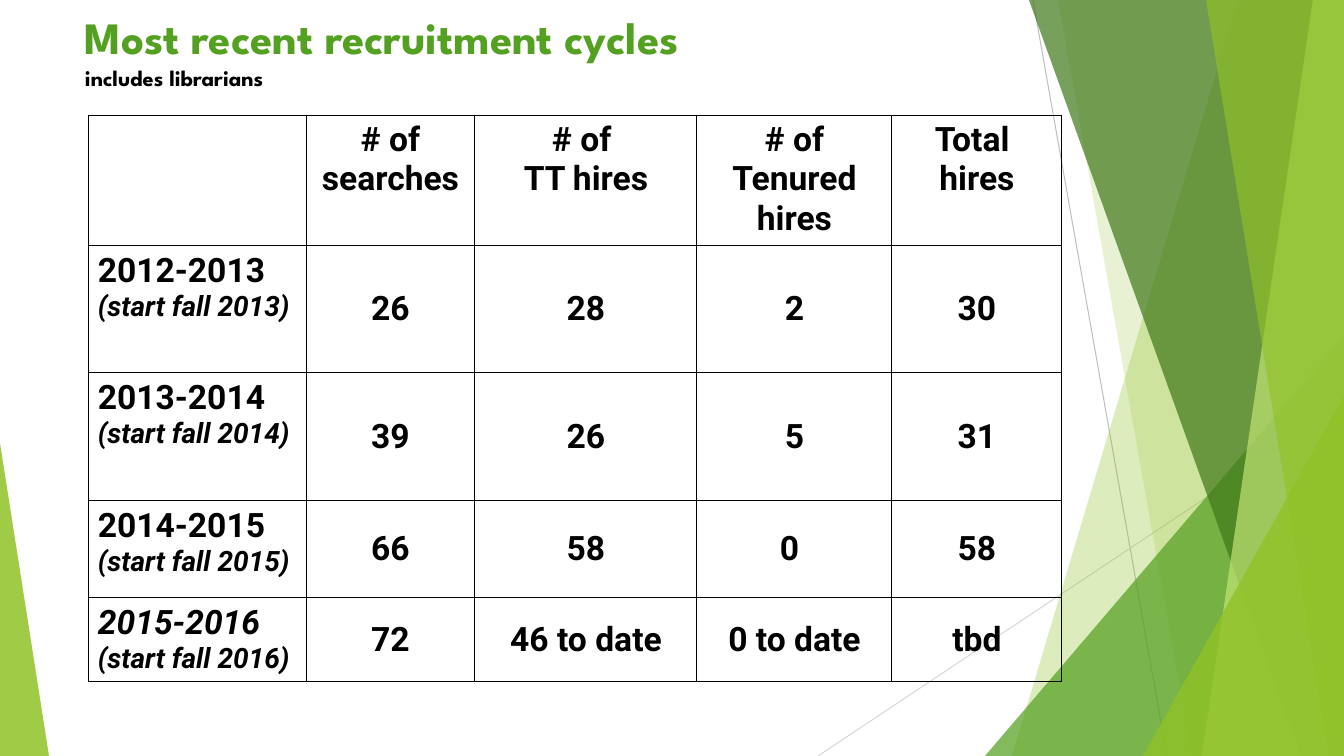
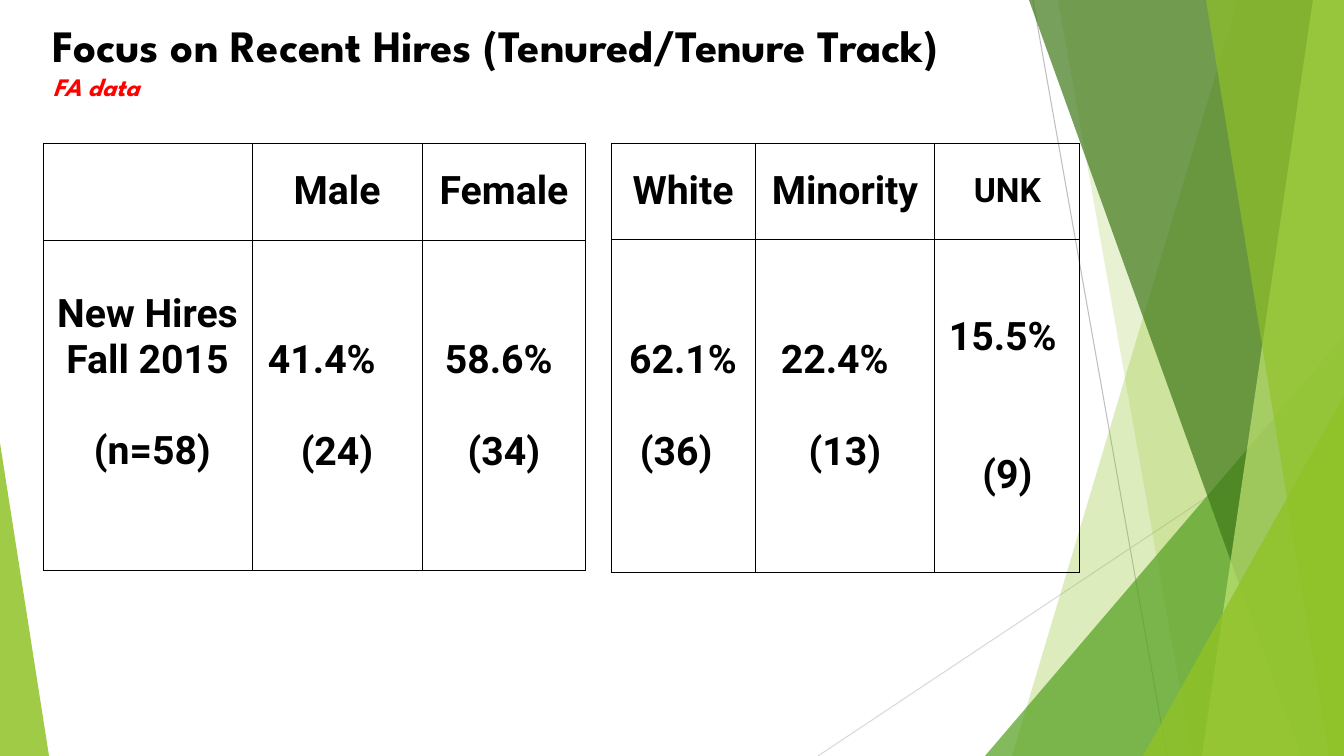
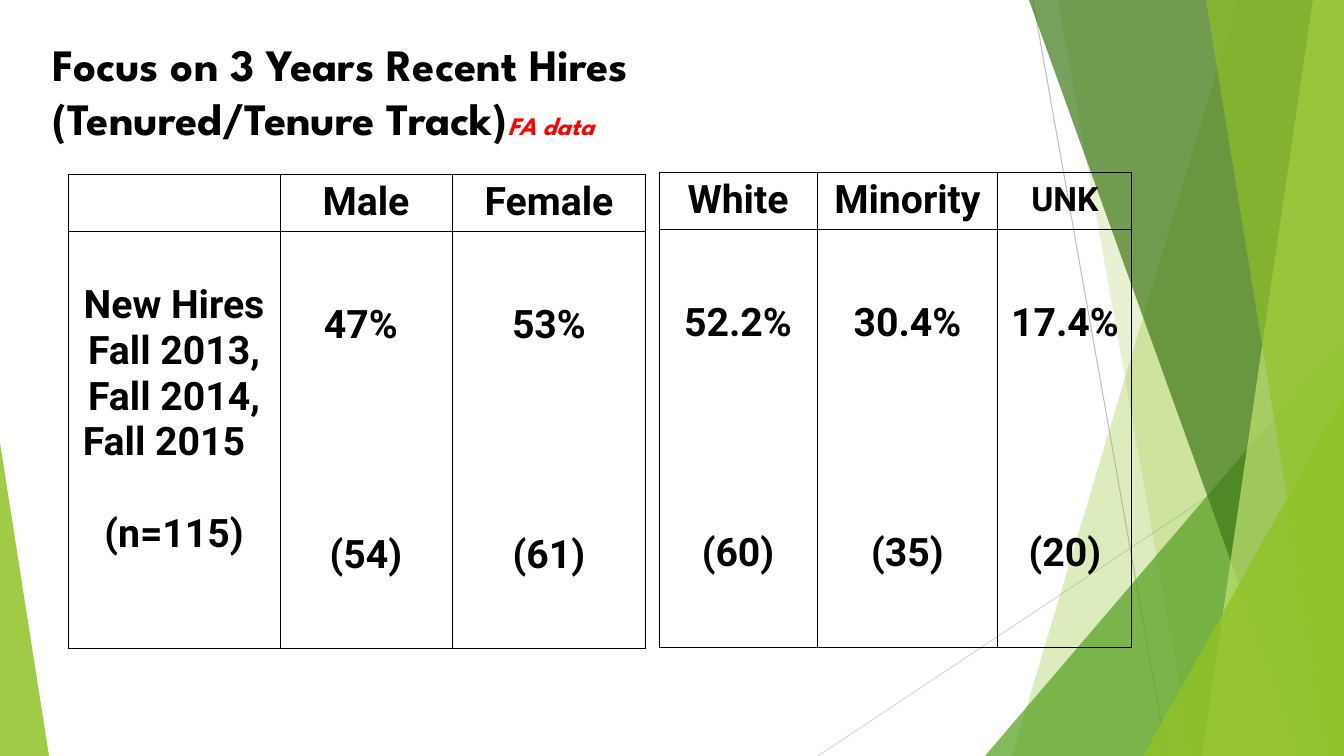
"""Builds three slides on faculty recruitment and recent hires."""
import pptx
import pptx.util
import pptx.dml.color
import pptx.enum.shapes
import pptx.enum.text
import pptx.oxml
import pptx.oxml.ns

RGB = pptx.dml.color.RGBColor
Pt = pptx.util.Pt
qn = pptx.oxml.ns.qn
SHAPE = pptx.enum.shapes.MSO_SHAPE
ALIGN = pptx.enum.text.PP_ALIGN
ANCHOR = pptx.enum.text.MSO_ANCHOR

SCALE = 914400 / 100.8
WIDTH, HEIGHT = 1344, 756
INSET_X, INSET_Y = 10, 5

BLACK = RGB(0x00, 0x00, 0x00)
RED = RGB(0xFF, 0x00, 0x00)
LIME = RGB(0x90, 0xC2, 0x26)
GREEN = RGB(0x54, 0xA0, 0x21)
FOREST = RGB(0x3F, 0x78, 0x19)
PALE = RGB(0xC0, 0xE4, 0x74)
GREY = RGB(0xBF, 0xBF, 0xBF)
LIGHT_GREY = RGB(0xD9, 0xD9, 0xD9)

TITLE_FONT, TABLE_FONT = "League Spartan", "Roboto"

RAYS = [(1033, 0, 1167, HEIGHT, GREY), (WIDTH, 406, 818, HEIGHT, LIGHT_GREY)]
FACETS = [
    ("band", (1238, 1012), LIME, 30),
    ("band", (1058, 1192), LIME, 20),
    ("triangle", (985, 336, 359, 1), GREEN, 72),
    ("band", (1029, 1301), FOREST, 70),
    ("band", (1313, 1202), PALE, 70),
    ("band", (1206, 1329), LIME, 65),
    ("triangle", (1143, 396, 201, 1), LIME, 80),
    ("triangle", (0, 443, 49, 0), LIME, 85),
]

FA_DATA = ("FA data", {"size": Pt(18), "color": RED, "italic": True})


def year(label, start, **font):
    """Return a row heading: the cycle and its start term."""
    return (INSET_Y, [(label, {"left": 0, **font}),
                      (start, {"left": 0, "size": Pt(20), "italic": True})])


def result(share, count, top, gap, share_left=None, count_left=None):
    """Return a cell with a percentage above its head count."""
    return (top, [(share, {"left": share_left}),
                  (count, {"left": count_left, "gap": gap})])


EMPTY = (None, [])
GENDER = [EMPTY, "Male", "Female"]
ETHNICITY = ["White", "Minority", (None, [("UNK", {"size": Pt(24)})])]

SLIDES = [
    {
        "title_at": (75, 5),
        "title": [[("Most recent recruitment cycles", {"color": GREEN})],
                  [("includes librarians", {"size": Pt(16)})]],
        "tables": [{
            "at": (88, 115), "size": 24,
            "cols": [218, 169, 222, 195, 170],
            "rows": [129, 127, 128, 97, 83],
            "cells": [
                [EMPTY,
                 (INSET_Y, ["# of", "searches"]),
                 (INSET_Y, [("# of", {"left": 67}), "TT hires"]),
                 (INSET_Y, ["# of", "Tenured", "hires"]),
                 (INSET_Y, [("Total", {"left": 33}), "hires"])],
                [year("2012-2013", "(start fall 2013)"), "26", "28", "2", "30"],
                [year("2013-2014", "(start fall 2014)"), "39", "26", "5", "31"],
                [year("2014-2015", "(start fall 2015)"), "66", "58",
                 (None, [("0", {"left": 73})]), "58"],
                [year("2015-2016", "(start fall 2016)", italic=True),
                 "72", "46 to date", "0 to date", "tbd"],
            ],
        }],
    },
    {
        "title_at": (43, 13),
        "title": [[("Focus on Recent Hires (Tenured/Tenure Track)", {})], [FA_DATA]],
        "tables": [
            {"at": (43, 143), "size": 28, "cols": [209, 170, 164], "rows": [97, 331],
             "cells": [GENDER, [
                 (51, ["New Hires", "Fall 2015", ("(n=58)", {"gap": 46, "left": 41})]),
                 result("41.4%", "(24)", 97, 46, share_left=6),
                 result("58.6%", "(34)", 97, 46, share_left=13)]]},
            {"at": (611, 143), "size": 28, "cols": [144, 180, 145], "rows": [96, 333],
             "cells": [ETHNICITY, [
                 result("62.1%", "(36)", 98, 46, count_left=19),
                 result("22.4%", "(13)", 98, 46, share_left=16),
                 result("15.5%", "(9)", 75, 92, share_left=4)]]},
        ],
    },
    {
        "title_at": (43, 32),
        "title": [[("Focus on 3 Years Recent Hires", {})],
                  [("(Tenured/Tenure Track)", {}), FA_DATA]],
        "tables": [
            {"at": (68, 174), "size": 28, "cols": [212, 172, 194], "rows": [56, 417],
             "cells": [GENDER, [
                 (51, ["New Hires", "Fall 2013,", "Fall 2014,",
                       ("Fall 2015", {"left": 5}), ("(n=115)", {"gap": 46})]),
                 result("47%", "(54)", 71, 184, share_left=34),
                 result("53%", "(61)", 71, 184)]]},
            {"at": (659, 172), "size": 28, "cols": [158, 181, 134], "rows": [56, 418],
             "cells": [ETHNICITY, [
                 result("52.2%", "(60)", 71, 184),
                 result("30.4%", "(35)", 71, 184),
                 result("17.4%", "(20)", 71, 184)]]},
        ],
    },
]


def px(n):
    return pptx.util.Emu(round(n * SCALE))


def apply(obj, values):
    for name, value in values.items():
        setattr(obj, name, value)


def add_run(p, text, font):
    r = p.add_run()
    r.text = text
    font = dict(font)
    r.font.color.rgb = font.pop("color", BLACK)
    apply(r.font, {"bold": True, **font})


def set_margins(box, top=INSET_Y):
    apply(box, {"margin_left": px(INSET_X), "margin_right": px(INSET_X),
                "margin_top": px(top), "margin_bottom": px(INSET_Y)})


def paragraphs(tf, items):
    for i, item in enumerate(items):
        yield (tf.add_paragraph() if i else tf.paragraphs[0]), item


def add_backdrop(s):
    for x1, y1, x2, y2, color in RAYS:
        ray = s.shapes.add_connector(pptx.enum.shapes.MSO_CONNECTOR.STRAIGHT,
                                     px(x1), px(y1), px(x2), px(y2))
        ray.line.color.rgb = color
        ray.line.width = Pt(0.75)
        ray.element.spPr.append(pptx.oxml.parse_xml(
            '<a:effectLst xmlns:a="http://schemas.openxmlformats.org/drawingml/2006/main"/>'))
    for kind, place, color, opacity in FACETS:
        if kind == "band":
            top_x, bottom_x = place
            outline = s.shapes.build_freeform(top_x, 0, scale=SCALE)
            outline.add_line_segments([(WIDTH, 0), (WIDTH, HEIGHT), (bottom_x, HEIGHT)])
            sp = outline.convert_to_shape()
        else:
            x, y, w, apex = place
            sp = s.shapes.add_shape(SHAPE.ISOSCELES_TRIANGLE,
                                    px(x), px(y), px(w), px(HEIGHT - y))
            sp.adjustments[0] = apex
        sp.shadow.inherit = False
        sp.fill.solid()
        sp.fill.fore_color.rgb = color
        sp.line.fill.background()
        clr = next(sp.element.iter(qn("a:srgbClr")))
        clr.makeelement(qn("a:alpha"), {})
        alpha = pptx.oxml.parse_xml(
            '<a:alpha xmlns:a="http://schemas.openxmlformats.org/drawingml/2006/main" '
            f'val="{opacity * 1000}"/>')
        clr.append(alpha)


def add_title(s, at, lines):
    x, y = at
    tf = s.shapes.add_textbox(px(x), px(y), px(980), px(110)).text_frame
    tf.word_wrap = True
    set_margins(tf)
    for p, runs in paragraphs(tf, lines):
        for text, font in runs:
            add_run(p, text, {"name": TITLE_FONT, "size": Pt(32), **font})


def add_borders(cell):
    tcPr = cell._tc.get_or_add_tcPr()
    for side in ("lnL", "lnR", "lnT", "lnB"):
        tcPr.append(pptx.oxml.parse_xml(
            f'<a:{side} xmlns:a="http://schemas.openxmlformats.org/drawingml/2006/main" '
            f'w="{Pt(0.75)}"><a:solidFill><a:srgbClr val="{BLACK}"/></a:solidFill></a:{side}>'))


def fill_cell(cell, content, size):
    top, lines = (None, [content]) if isinstance(content, str) else content
    add_borders(cell)
    cell.fill.background()
    set_margins(cell, INSET_Y if top is None else top)
    cell.vertical_anchor = ANCHOR.MIDDLE if top is None else ANCHOR.TOP
    for p, line in paragraphs(cell.text_frame, lines):
        text, font = (line, {}) if isinstance(line, str) else line
        font = {"name": TABLE_FONT, "size": Pt(size), **font}
        gap, left = font.pop("gap", 0), font.pop("left", None)
        p.alignment = ALIGN.CENTER if left is None else ALIGN.LEFT
        if left:
            p._p.get_or_add_pPr().set("marL", str(px(left)))
        if gap:
            p.space_before = px(gap)
        add_run(p, text, font)


def add_grid(s, grid):
    x, y = grid["at"]
    cols, rows = grid["cols"], grid["rows"]
    table = s.shapes.add_table(len(rows), len(cols), px(x), px(y),
                               px(sum(cols)), px(sum(rows))).table
    apply(table, {"first_row": False, "horz_banding": False})
    for column, w in zip(table.columns, cols):
        column.width = px(w)
    for row, h, contents in zip(table.rows, rows, grid["cells"]):
        row.height = px(h)
        for cell, content in zip(row.cells, contents):
            fill_cell(cell, content, grid["size"])


def main():
    prs = pptx.Presentation()
    apply(prs, {"slide_width": px(WIDTH), "slide_height": px(HEIGHT)})
    for page in SLIDES:
        s = prs.slides.add_slide(prs.slide_layouts[6])
        add_backdrop(s)
        add_title(s, page["title_at"], page["title"])
        for grid in page["tables"]:
            add_grid(s, grid)
    prs.save("out.pptx")


if __name__ == "__main__":
    main()
